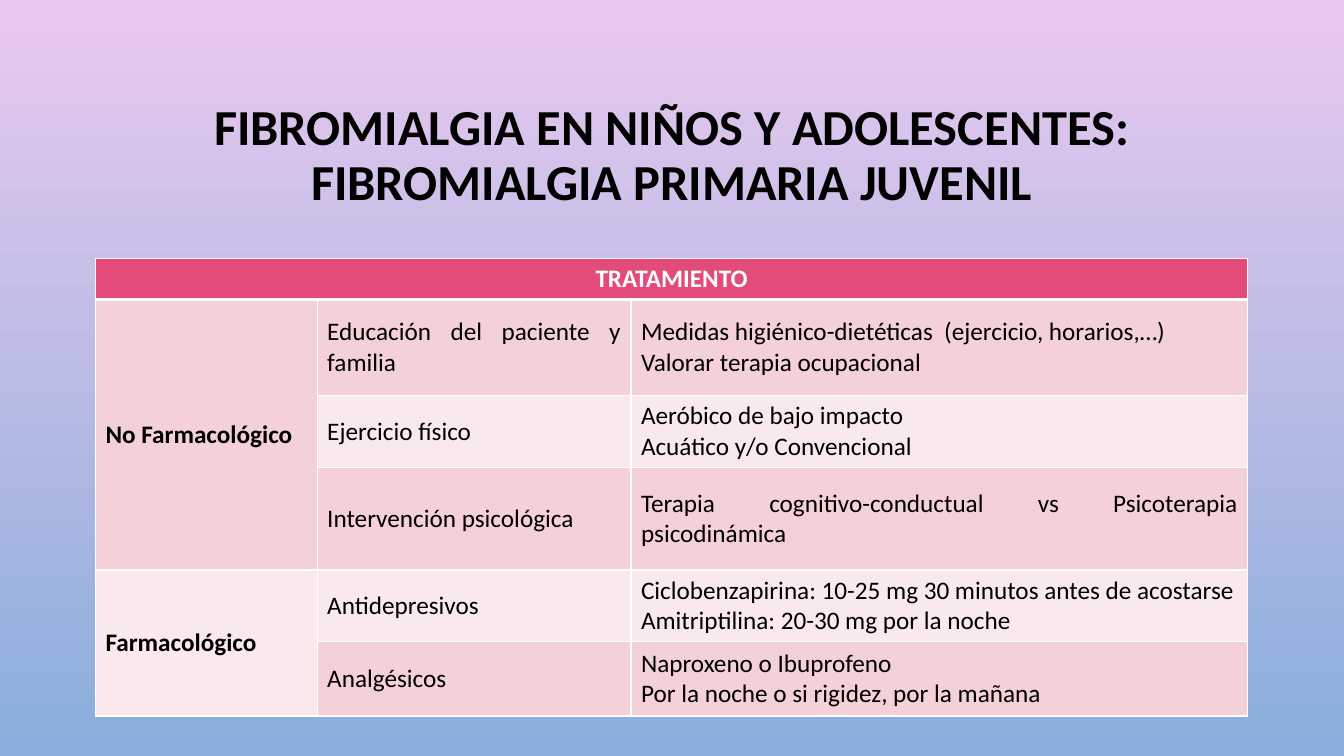
from dataclasses import dataclass

from lxml.etree import SubElement as Sub
from pptx import Presentation
from pptx.dml.color import RGBColor
from pptx.enum.text import MSO_ANCHOR as Anchor, MSO_AUTO_SIZE as Fit, PP_ALIGN as Align
from pptx.oxml.ns import qn
from pptx.util import Inches, Pt

WIDE, HIGH = Inches(13.33), Inches(7.5)
COLS = (16.5, 23.35, 45.9)
ROWS = (5.29, 12.76, 9.39, 13.56, 9.39, 9.85)
PINK, ROSE, PALE = "E34B7A", "F4D0D7", "FAE9EC"
BLACK, WHITE = "000000", "FFFFFF"


@dataclass(frozen=True)
class Item:
    """One table cell, with the rows and columns it spans."""
    row: int
    col: int
    text: str
    fill: str
    down: int = 1
    over: int = 1
    bold: bool = False
    ink: str = BLACK
    align: Align = Align.JUSTIFY


ITEMS = (
    Item(0, 0, "TRATAMIENTO", PINK, over=3, bold=True, ink=WHITE, align=Align.CENTER),
    Item(1, 0, "No Farmacológico", ROSE, down=3, bold=True),
    Item(1, 1, "Educación del paciente y familia", ROSE),
    Item(1, 2, "Medidas higiénico-dietéticas  (ejercicio, horarios,…)\nValorar terapia ocupacional", ROSE),
    Item(2, 1, "Ejercicio físico", PALE),
    Item(2, 2, "Aeróbico de bajo impacto\nAcuático y/o Convencional", PALE),
    Item(3, 1, "Intervención psicológica", ROSE),
    Item(3, 2, "Terapia cognitivo-conductual vs Psicoterapia psicodinámica", ROSE),
    Item(4, 0, "Farmacológico", PALE, down=2, bold=True),
    Item(4, 1, "Antidepresivos", PALE),
    Item(4, 2, "Ciclobenzapirina: 10-25 mg 30 minutos antes de acostarse\n"
               "Amitriptilina: 20-30 mg por la noche", PALE),
    Item(5, 1, "Analgésicos", ROSE),
    Item(5, 2, "Naproxeno o Ibuprofeno\nPor la noche o si rigidez, por la mañana", ROSE),
)


def tint(code: str) -> RGBColor:
    """Turn a hex string into a colour."""
    return RGBColor.from_string(code)


def across(share: float) -> int:
    """Give a percentage of the slide's width."""
    return round(WIDE * share / 100)


def along(share: float) -> int:
    """Give a percentage of the slide's height."""
    return round(HIGH * share / 100)


def style(frame, size: int, bold: bool, ink: str, align: Align) -> None:
    """Format every paragraph of a text frame."""
    for para in frame.paragraphs:
        para.alignment = align
        for run in para.runs:
            run.font.name, run.font.size, run.font.bold = "Calibri", Pt(size), bold
            run.font.color.rgb = tint(ink)


def edge(cell, row: int) -> None:
    """Draw white cell borders, heavier below the header."""
    props = cell._tc.get_or_add_tcPr()
    for side in "LRTB":
        heavy = (row, side) in ((0, "B"), (1, "T"))
        line = Sub(props, qn(f"a:ln{side}"), w=str(Pt(3 if heavy else 1)))
        Sub(Sub(line, qn("a:solidFill")), qn("a:srgbClr"), val=WHITE)


def place(table, item: Item) -> None:
    """Merge, fill and write one item."""
    head = table.cell(item.row, item.col)
    last = table.cell(item.row + item.down - 1, item.col + item.over - 1)
    if item.down * item.over > 1:
        head.merge(last)
    for row in range(item.row, item.row + item.down):
        for col in range(item.col, item.col + item.over):
            cell = table.cell(row, col)
            edge(cell, row)
            cell.fill.solid()
            cell.fill.fore_color.rgb = tint(item.fill)
    head.text_frame.text = item.text
    head.vertical_anchor = Anchor.MIDDLE
    style(head.text_frame, 18, item.bold, item.ink, item.align)


def main() -> None:
    """Build and save the slide."""
    deck = Presentation()
    deck.slide_width, deck.slide_height = WIDE, HIGH
    slide = deck.slides.add_slide(deck.slide_layouts[5])

    back = slide.background.fill
    back.gradient()
    back.gradient_angle = 270
    for stop, code in zip(back.gradient_stops, ("E9C8EF", "89AEDB")):
        stop.color.rgb = tint(code)

    title = slide.shapes.title
    title.left, title.top = across(7.5), along(9.07)
    title.width, title.height = across(85), along(23.33)
    frame = title.text_frame
    frame.text = "FIBROMIALGIA EN NIÑOS Y ADOLESCENTES: FIBROMIALGIA PRIMARIA JUVENIL"
    frame.word_wrap, frame.auto_size = True, Fit.NONE
    frame.vertical_anchor = Anchor.MIDDLE
    frame.paragraphs[0].line_spacing = 0.9
    style(frame, 36, True, BLACK, Align.CENTER)

    table = slide.shapes.add_table(
        len(ROWS), len(COLS), across(7.1), along(34.2), across(sum(COLS)), along(sum(ROWS))
    ).table
    table.horz_banding = False
    for col, share in zip(table.columns, COLS):
        col.width = across(share)
    for row, share in zip(table.rows, ROWS):
        row.height = along(share)
    for item in ITEMS:
        place(table, item)

    deck.save("out.pptx")


if __name__ == "__main__":
    main()
